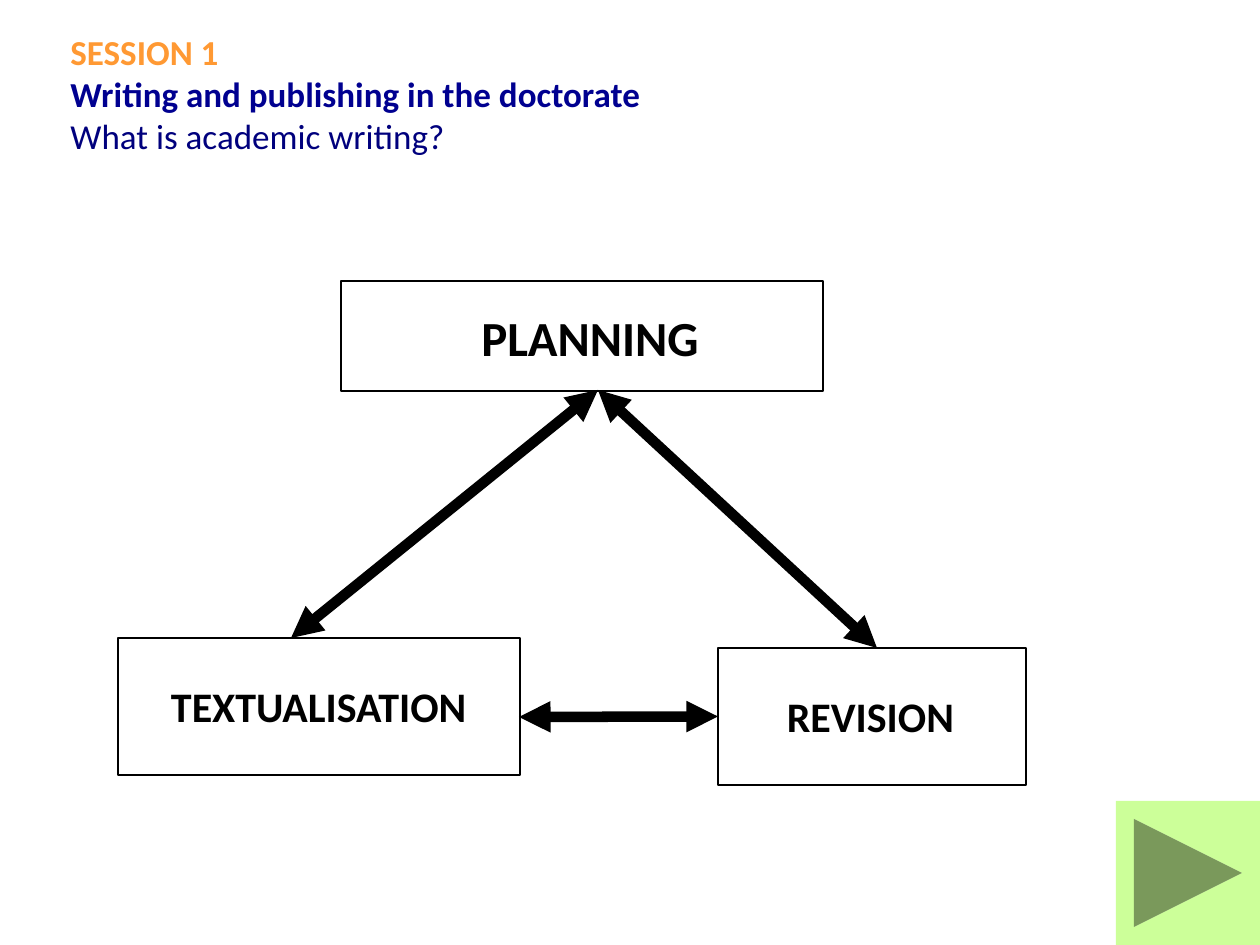
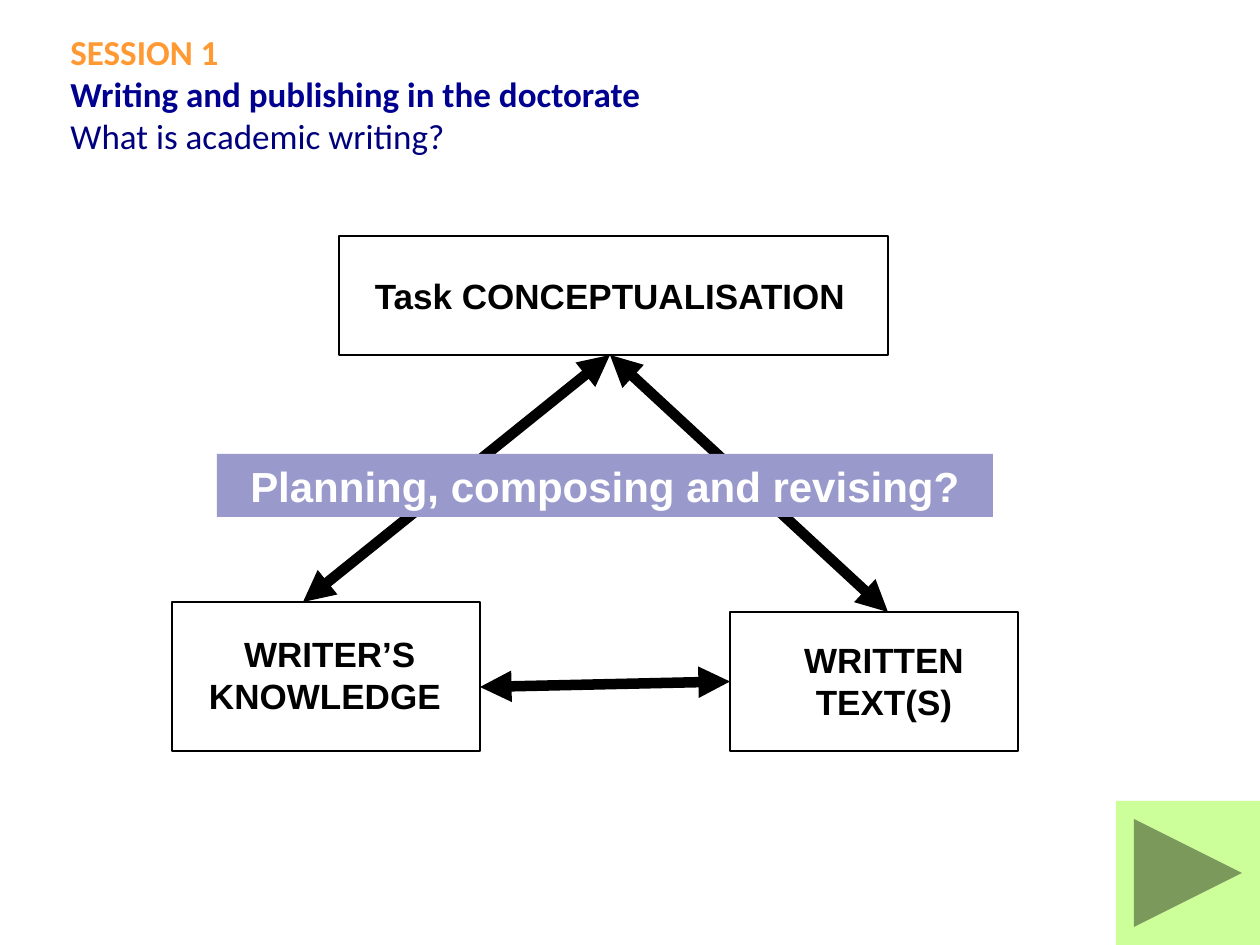
from dataclasses import dataclass

from lxml import etree
from pptx import Presentation
from pptx import util as u
from pptx.dml.color import RGBColor
from pptx.enum import shapes, text
from pptx.oxml.ns import qn

EMU_PER_PX = 914400 / 126
LEFT_SIDE = 1


@dataclass(frozen=True)
class Theme:
    ink: str = "000000"
    session: str = "FF9933"
    course: str = "000090"
    topic: str = "00007D"
    button: str = "CCFF99"
    band: str = "9999CC"
    band_text: str = "FFFFFF"
    title_font: str = "Calibri"
    body_font: str = "Arial"
    title_size: int = 20
    stage_size: int = 24
    main_stage_size: int = 28
    concept_size: int = 20
    band_size: int = 24
    outline: float = 0.75
    arrow: int = 6


THEME = Theme()


def px(*lengths):
    return [u.Emu(round(length * EMU_PER_PX)) for length in lengths]


def color(value):
    return RGBColor.from_string(value)


def add_run(paragraph, words, font, size, ink, bold=True):
    run = paragraph.add_run()
    run.text = words
    run.font.name = font
    run.font.size = u.Pt(size)
    run.font.bold = bold
    run.font.color.rgb = color(ink)


def next_paragraph(frame, index):
    return frame.paragraphs[0] if index == 0 else frame.add_paragraph()


def add_centred_lines(frame, lines, font, size, ink):
    frame.word_wrap = True
    for index, line in enumerate(lines):
        paragraph = next_paragraph(frame, index)
        paragraph.alignment = text.PP_ALIGN.CENTER
        add_run(paragraph, line, font, size, ink)


def add_label(slide, area, lines, font, size):
    label = slide.shapes.add_textbox(*px(*area))
    add_centred_lines(label.text_frame, lines, font, size, THEME.ink)


def add_filled(slide, kind, area, fill):
    shape = slide.shapes.add_shape(kind, *px(*area))
    shape.shadow.inherit = False
    shape.fill.solid()
    shape.fill.fore_color.rgb = color(fill)
    shape.line.fill.background()
    return shape


def add_outline_box(slide, area):
    box = slide.shapes.add_shape(shapes.MSO_SHAPE.RECTANGLE, *px(*area))
    box.shadow.inherit = False
    box.fill.background()
    box.line.color.rgb = color(THEME.ink)
    box.line.width = u.Pt(THEME.outline)
    return box


def add_double_arrow(slide, start, end, target=None):
    arrow = slide.shapes.add_connector(
        shapes.MSO_CONNECTOR.STRAIGHT, *px(*start, *end))
    arrow.line.color.rgb = color(THEME.ink)
    arrow.line.width = u.Pt(THEME.arrow)
    line = arrow.line._get_or_add_ln()
    for tip in ("a:headEnd", "a:tailEnd"):
        etree.SubElement(line, qn(tip), type="triangle")
    etree.SubElement(arrow._element.spPr, qn("a:effectLst"))
    if target is not None:
        arrow.end_connect(target, LEFT_SIDE)


def add_triangle(slide, boxes, apex, left_foot, right_foot, base):
    _, _, right_box = [add_outline_box(slide, area) for area in boxes]
    for foot in (left_foot, right_foot):
        add_double_arrow(slide, apex, foot)
    add_double_arrow(slide, *base, target=right_box)


def add_title(slide):
    title = slide.shapes.add_textbox(*px(58, 24, 1150, 183))
    frame = title.text_frame
    frame.word_wrap = True
    lines = (
        ("SESSION 1", THEME.session, True),
        ("Writing and publishing in the doctorate", THEME.course, True),
        ("What is academic writing?", THEME.topic, False),
    )
    for index, (words, ink, bold) in enumerate(lines):
        add_run(next_paragraph(frame, index), words,
                THEME.title_font, THEME.title_size, ink, bold)


def add_band(slide, area, words):
    band = add_filled(slide, shapes.MSO_SHAPE.RECTANGLE, area, THEME.band)
    add_centred_lines(band.text_frame, [words], THEME.body_font,
                      THEME.band_size, THEME.band_text)


def new_slide(presentation):
    slide = presentation.slides.add_slide(presentation.slide_layouts[6])
    add_title(slide)
    add_filled(slide, shapes.MSO_SHAPE.ACTION_BUTTON_FORWARD_OR_NEXT,
               (1116, 801, 144, 144), THEME.button)
    return slide


def build_stages(presentation):
    slide = new_slide(presentation)
    for area, words, size in (
        ((135, 301, 910, 72), "PLANNING", THEME.main_stage_size),
        ((86, 674, 456, 63), " TEXTUALISATION", THEME.stage_size),
        ((687, 684, 367, 64), "REVISION", THEME.stage_size),
    ):
        add_label(slide, area, [words], THEME.title_font, size)
    add_triangle(
        slide,
        boxes=((341, 281, 482, 110), (118, 638, 402, 137), (718, 648, 308, 137)),
        apex=(598, 390), left_foot=(291, 638), right_foot=(877, 648),
        base=((519, 717), (718, 717)))


def build_concepts(presentation):
    slide = new_slide(presentation)
    for area, lines in (
        ((155, 268, 910, 55), ["Task CONCEPTUALISATION"]),
        ((97, 626, 456, 97), [" WRITER’S", "KNOWLEDGE"]),
        ((750, 632, 268, 97), ["WRITTEN TEXT(S)"]),
    ):
        add_label(slide, area, lines, THEME.body_font, THEME.concept_size)
    add_triangle(
        slide,
        boxes=((339, 236, 549, 119), (172, 602, 308, 149), (730, 612, 288, 139)),
        apex=(610, 355), left_foot=(303, 602), right_foot=(888, 612),
        base=((480, 687), (730, 682)))
    add_band(slide, (217, 454, 776, 63), "Planning, composing and revising?")


def main():
    presentation = Presentation()
    presentation.slide_width, presentation.slide_height = px(1260, 945)
    build_stages(presentation)
    build_concepts(presentation)
    presentation.save("out.pptx")


if __name__ == "__main__":
    main()
